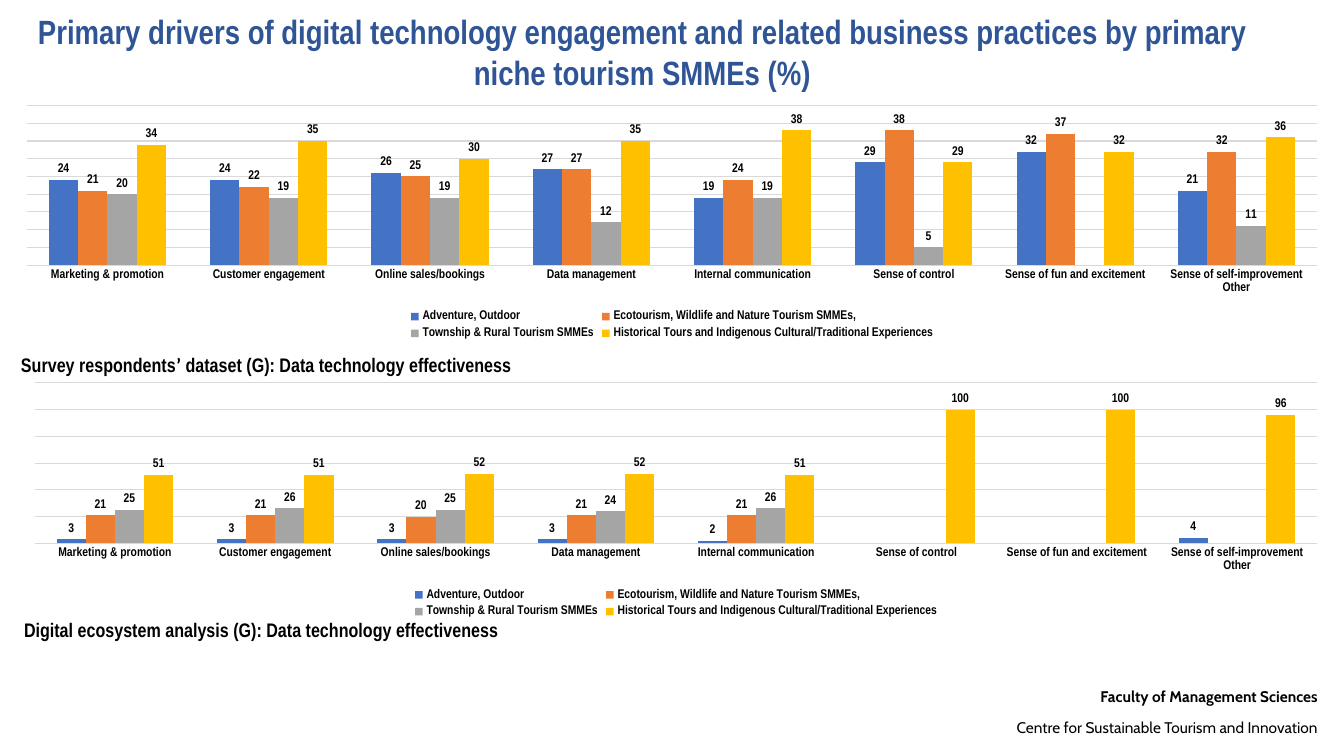
from pptx import Presentation
from pptx.chart import data as cd
from pptx.dml.color import RGBColor
from pptx.enum import chart as ce, text as te
from pptx.util import Inches, Pt

FACE = "Arial Narrow"
LABEL = {"size": Pt(9), "bold": True, "name": FACE}
HEAD = {"size": Pt(14), "bold": True, "name": FACE}
FOOT = {"size": Pt(11), "name": "Cabin"}

CATS = ["Marketing & promotion", "Customer engagement",
        "Online sales/bookings", "Data management",
        "Internal communication", "Sense of control",
        "Sense of fun and excitement", "Sense of self-improvement Other"]
NICHES = [("Adventure, Outdoor", "4472C4"),
          ("Ecotourism, Wildlife and Nature Tourism SMMEs,", "ED7D31"),
          ("Township & Rural Tourism SMMEs", "A5A5A5"),
          ("Historical Tours and Indigenous Cultural/Traditional Experiences",
           "FFC000")]
SURVEY = [[24, 24, 26, 27, 19, 29, 32, 21],
          [21, 22, 25, 27, 24, 38, 37, 32],
          [20, 19, 19, 12, 19, 5, None, 11],
          [34, 35, 30, 35, 38, 29, 32, 36]]
DIGITAL = [[3, 3, 3, 3, 2, None, None, 4],
           [21, 21, 20, 21, 21, None, None, None],
           [25, 26, 25, 24, 26, None, None, None],
           [51, 51, 52, 52, 51, 100, 100, 96]]


def rgb(code):
    return RGBColor.from_string(code)


def style(font, form, color="000000"):
    for key, val in form.items():
        setattr(font, key, val)
    font.color.rgb = rgb(color)


def add_run(para, words, form, color="000000"):
    run = para.add_run()
    run.text = words
    style(run.font, form, color)


def set_frame(frame, wrap):
    form = {"word_wrap": wrap, "auto_size": te.MSO_AUTO_SIZE.NONE,
            "vertical_anchor": te.MSO_ANCHOR.TOP}
    for key, val in form.items():
        setattr(frame, key, val)


def add_title(slide, box, words):
    title = slide.shapes.title
    title.left, title.top, title.width, title.height = map(Inches, box)
    set_frame(title.text_frame, True)
    para = title.text_frame.paragraphs[0]
    para.alignment = te.PP_ALIGN.CENTER
    add_run(para, words, {**HEAD, "size": Pt(24)}, "2F5597")


def add_text(slide, box, wrap=False):
    frame = slide.shapes.add_textbox(*map(Inches, box)).text_frame
    set_frame(frame, wrap)
    return frame


def add_head(slide, box, runs):
    para = add_text(slide, box).paragraphs[0]
    for words, face in runs:
        add_run(para, words, {**HEAD, "name": face})


def add_foot(slide, box, lines):
    frame = add_text(slide, box, True)
    for row, words in enumerate(lines):
        para = frame.add_paragraph() if row else frame.paragraphs[0]
        para.alignment = te.PP_ALIGN.RIGHT
        para.line_spacing = 1.5
        if row:
            para.space_before = Pt(2.2)
        add_run(para, words, {**FOOT, "bold": row == 0})


def add_bars(slide, box, rows, top, step):
    data = cd.CategoryChartData(number_format="0")
    data.categories = CATS
    for (name, _), vals in zip(NICHES, rows):
        data.add_series(name, vals)
    chart = slide.shapes.add_chart(
        ce.XL_CHART_TYPE.COLUMN_CLUSTERED, *map(Inches, box), data).chart
    chart.has_title = False
    style(chart.font, LABEL)

    # Legend
    chart.has_legend = True
    chart.legend.position = ce.XL_LEGEND_POSITION.BOTTOM
    chart.legend.include_in_layout = False
    style(chart.legend.font, LABEL)

    # Axes
    cat, val = chart.category_axis, chart.value_axis
    cat.major_tick_mark = ce.XL_TICK_MARK.NONE
    cat.format.line.fill.background()
    style(cat.tick_labels.font, LABEL)
    val.visible = False
    val.minimum_scale, val.maximum_scale, val.major_unit = 0, top, step
    val.has_major_gridlines = True
    grid = val.major_gridlines.format.line
    grid.color.rgb = rgb("D9D9D9")
    grid.width = Pt(0.75)

    # Columns and their values
    plot = chart.plots[0]
    plot.gap_width, plot.overlap = 150, 0
    plot.vary_by_categories = False
    for bars, (_, color) in zip(plot.series, NICHES):
        bars.format.fill.solid()
        bars.format.fill.fore_color.rgb = rgb(color)
        tags = bars.data_labels
        tags.show_value = True
        tags.number_format, tags.number_format_is_linked = "0", False
        tags.position = ce.XL_LABEL_POSITION.OUTSIDE_END
        style(tags.font, LABEL)


def main():
    deck = Presentation()
    deck.slide_width, deck.slide_height = Inches(13.33), Inches(7.5)
    slide = deck.slides.add_slide(deck.slide_layouts.get_by_name("Title Only"))

    # Title
    add_title(slide, (0.08, 0.06, 12.58, 1.21),
              "Primary drivers of digital technology engagement and related "
              "business practices by primary niche tourism SMMEs (%)")

    # Captions
    add_head(slide, (0.11, 3.45, 5.11, 0.64),
             [("Survey respondents", FACE), ("’", "Calibri"),
              (" dataset (G): Data technology effectiveness", FACE)])
    add_head(slide, (0.14, 6.08, 4.96, 0.34),
             [("Digital ecosystem analysis (G): "
               "Data technology effectiveness", FACE)])

    # Charts
    add_bars(slide, (0, 1, 13.33, 2.41), SURVEY, 45, 5)
    add_bars(slide, (0.08, 3.75, 13.25, 2.42), DIGITAL, 120, 20)

    # Footer
    add_foot(slide, (5.67, 6.68, 7.5, 0.56),
             ["Faculty of Management Sciences",
              "Centre for Sustainable Tourism and Innovation"])
    deck.save("out.pptx")


if __name__ == "__main__":
    main()
